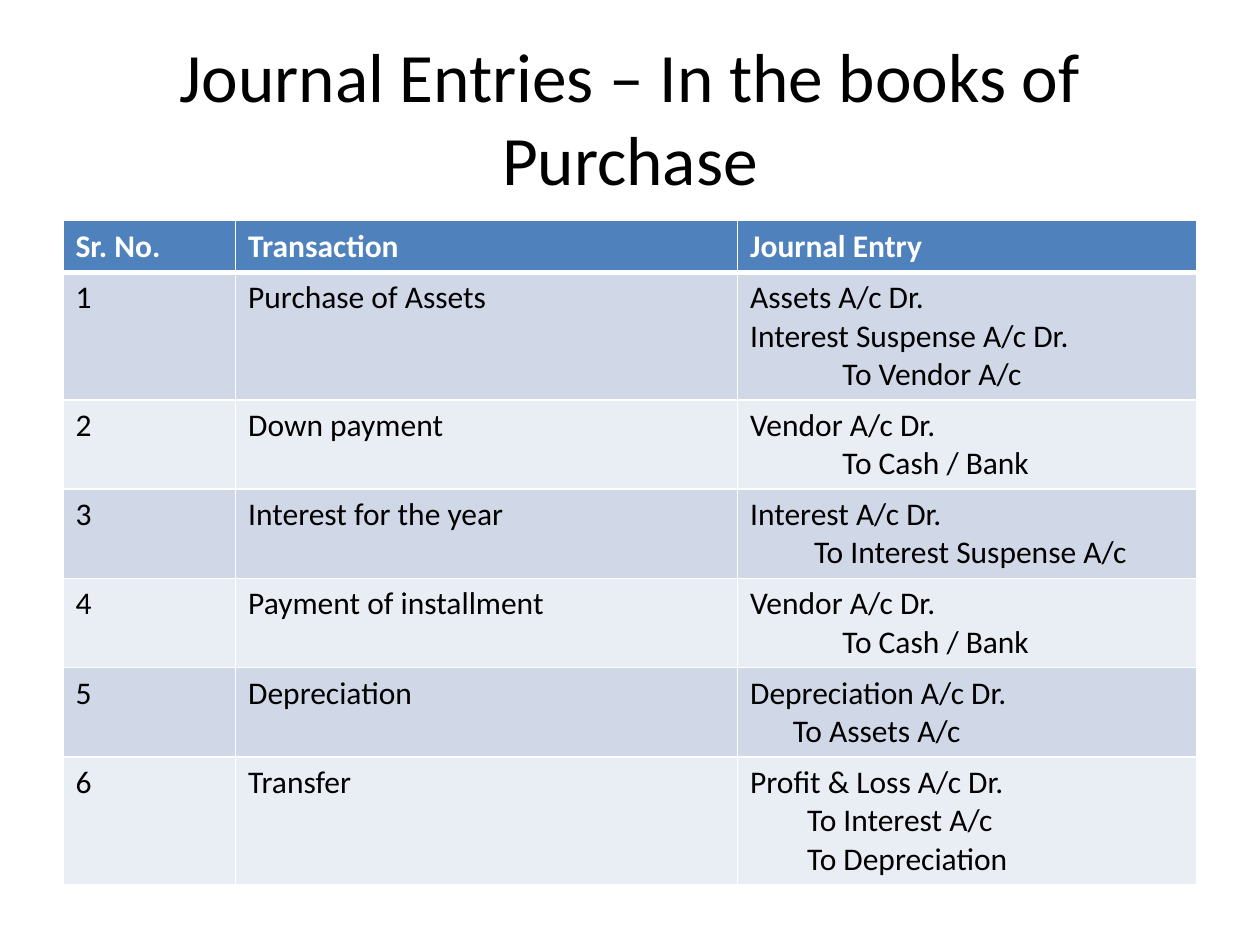
from dataclasses import dataclass

from pptx import Presentation
from pptx.dml.color import RGBColor
from pptx.enum.text import MSO_ANCHOR, PP_ALIGN
from pptx.oxml.ns import qn
from pptx.util import Cm, Pt
from lxml import etree

MIDDLE = MSO_ANCHOR.MIDDLE
CENTER, LEFT = PP_ALIGN.CENTER, PP_ALIGN.LEFT

TITLE = {"name": "Calibri", "size": Pt(39.6), "bold": False}
HEADER = {"name": "Calibri", "size": Pt(18), "bold": True}
BODY = {"name": "Calibri", "size": Pt(18), "bold": False}
BLACK, WHITE = "000000", "FFFFFF"
HEADER_FILL = "4F81BD"
BAND_FILLS = ("D0D8E8", "E9EDF4")

COL_WIDTHS = (3.48, 10.12, 9.26)
HEADER_HEIGHT = 1.04
LINE_HEIGHT = 0.77
CELL_PADDING = 0.26


@dataclass
class Entry:
    transaction: str
    debits: list[str]
    credits: list[str]
    indent: float


ENTRIES = [
    Entry("Purchase of Assets", ["Assets A/c Dr.", "Interest Suspense A/c Dr."],
          ["To Vendor A/c"], 1.86),
    Entry("Down payment", ["Vendor A/c Dr."], ["To Cash / Bank"], 1.86),
    Entry("Interest for the year", ["Interest A/c Dr."],
          ["To Interest Suspense A/c"], 1.29),
    Entry("Payment of installment", ["Vendor A/c Dr."], ["To Cash / Bank"], 1.86),
    Entry("Depreciation", ["Depreciation A/c Dr."], ["To Assets A/c"], 0.86),
    Entry("Transfer", ["Profit & Loss A/c Dr."],
          ["To Interest A/c", "To Depreciation"], 1.15),
]


def rgb(value: str) -> RGBColor:
    return RGBColor.from_string(value)


def add_text(p, text: str, fmt: dict, color: str, align=LEFT, indent: float = 0) -> None:
    p.alignment = align
    if indent:
        p._p.get_or_add_pPr().set("marL", str(Cm(indent)))
    r = p.add_run()
    r.text = text
    for name, value in fmt.items():
        setattr(r.font, name, value)
    r.font.color.rgb = rgb(color)


def set_borders(cell, top: float, bottom: float) -> None:
    tcPr = cell._tc.get_or_add_tcPr()
    for side, width in (("L", 1), ("R", 1), ("T", top), ("B", bottom)):
        ln = etree.SubElement(tcPr, qn(f"a:ln{side}"), w=str(Pt(width)))
        fill = etree.SubElement(ln, qn("a:solidFill"))
        etree.SubElement(fill, qn("a:srgbClr"), val=WHITE)


def fill_cell(cell, lines: list[tuple[str, float]], fmt: dict, color: str,
              fill: str, top: float = 1, bottom: float = 1) -> None:
    set_borders(cell, top, bottom)
    cell.fill.solid()
    cell.fill.fore_color.rgb = rgb(fill)
    tf = cell.text_frame
    for i, (text, indent) in enumerate(lines):
        p = tf.add_paragraph() if i else tf.paragraphs[0]
        add_text(p, text, fmt, color, indent=indent)


def add_title(s, text: str) -> None:
    sp = s.shapes.add_textbox(Cm(1.27), Cm(0.76), Cm(22.86), Cm(3.18))
    tf = sp.text_frame
    tf.word_wrap = True
    tf.vertical_anchor = MIDDLE
    add_text(tf.paragraphs[0], text, TITLE, BLACK, CENTER)


def add_journal(s, entries: list[Entry]) -> None:
    heights = [HEADER_HEIGHT] + [
        LINE_HEIGHT * len(e.debits + e.credits) + CELL_PADDING for e in entries]
    table = s.shapes.add_table(len(heights), len(COL_WIDTHS), Cm(1.27), Cm(4.45),
                               Cm(sum(COL_WIDTHS)), Cm(sum(heights))).table
    for column, width in zip(table.columns, COL_WIDTHS):
        column.width = Cm(width)
    for row, height in zip(table.rows, heights):
        row.height = Cm(height)
    for c, text in enumerate(("Sr. No.", "Transaction", "Journal Entry")):
        fill_cell(table.cell(0, c), [(text, 0)], HEADER, WHITE, HEADER_FILL, bottom=3)
    for n, e in enumerate(entries, 1):
        journal = [(t, 0) for t in e.debits] + [(t, e.indent) for t in e.credits]
        for c, lines in enumerate(([(str(n), 0)], [(e.transaction, 0)], journal)):
            fill_cell(table.cell(n, c), lines, BODY, BLACK,
                      BAND_FILLS[(n - 1) % 2], top=3 if n == 1 else 1)


def main() -> None:
    prs = Presentation()
    prs.slide_width, prs.slide_height = Cm(25.4), Cm(19.05)
    s = prs.slides.add_slide(prs.slide_layouts[6])
    add_title(s, "Journal Entries – In the books of Purchase")
    add_journal(s, ENTRIES)
    prs.save("out.pptx")


if __name__ == "__main__":
    main()
